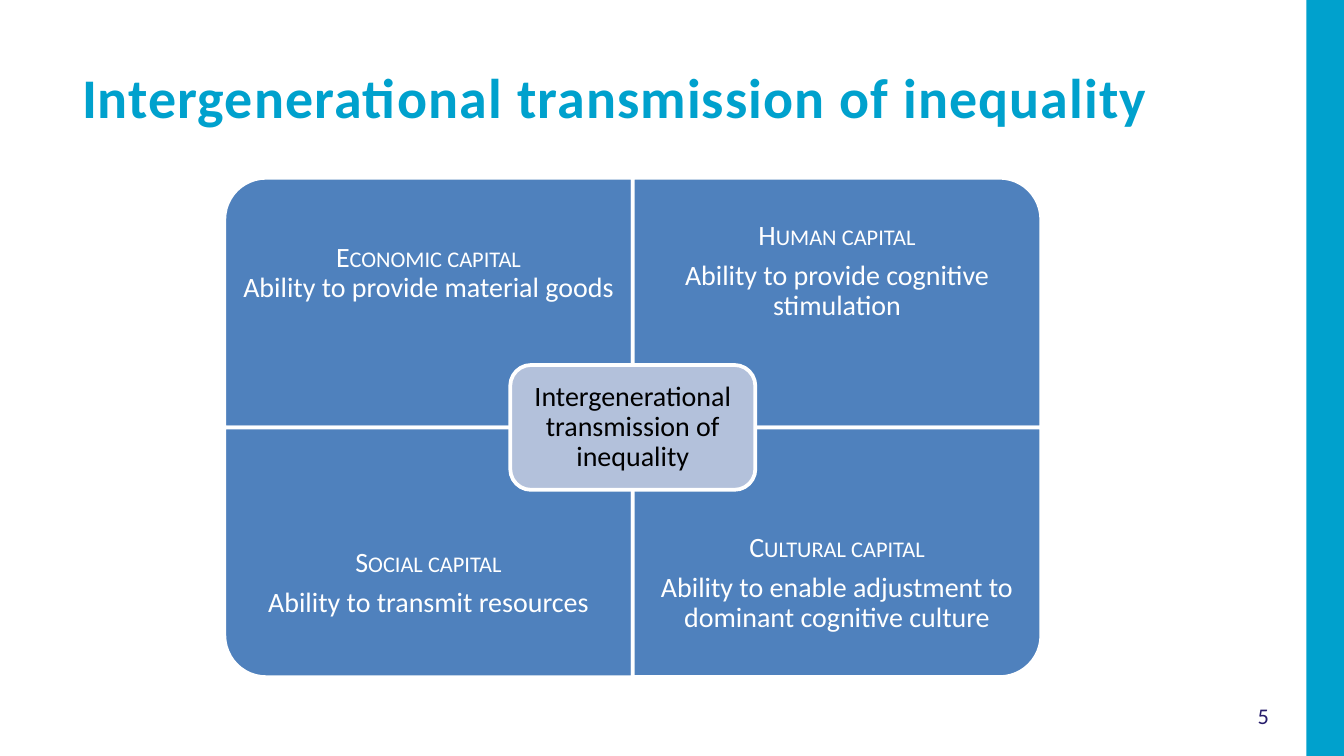
from pptx import Presentation
from pptx.dml.color import RGBColor
from pptx.enum.shapes import MSO_SHAPE as Shape
from pptx.enum.text import MSO_ANCHOR as Anchor, PP_ALIGN as Align
from pptx.util import Cm, Pt

TITLE = "Intergenerational transmission of inequality"
PAGE_NUMBER = "5"
PANELS = [
    {"column": 0, "row": 0, "turn": 270, "label": "Economic capital",
     "ability": "Ability to provide material goods", "label_spacing": 1.0, "label_after": 0},
    {"column": 1, "row": 0, "turn": 0, "label": "Human capital",
     "ability": "Ability to provide cognitive stimulation"},
    {"column": 0, "row": 1, "turn": 180, "label": "Social capital",
     "ability": "Ability to transmit resources"},
    {"column": 1, "row": 1, "turn": 90, "label": "Cultural capital",
     "ability": "Ability to enable adjustment to dominant cognitive culture"},
]
PAGE_W, PAGE_H = 25.4, 14.29
BAR_W = 0.71
GRID_LEFT, GRID_TOP = 4.24, 3.36
PANEL_W, PANEL_H = 7.72, 4.72
LABEL_H = PANEL_H * 3 / 4
CENTRE_W, CENTRE_H = PANEL_W * 0.6, PANEL_H / 2
AFTER = 5.25


def colour(code):
    return RGBColor.from_string(code)


def add_block(page, kind, left, top, width, height, fill, line=None):
    block = page.shapes.add_shape(kind, Cm(left), Cm(top), Cm(width), Cm(height))
    block.shadow.inherit = False
    block.fill.solid()
    block.fill.fore_color.rgb = colour(fill)
    if line:
        block.line.color.rgb = colour(line)
        block.line.width = Pt(2)
    else:
        block.line.fill.background()
    return block


def set_frame(frame, inset, anchor=Anchor.MIDDLE):
    frame.word_wrap = True
    frame.vertical_anchor = anchor
    frame.margin_left = frame.margin_right = Cm(inset)
    frame.margin_top = frame.margin_bottom = Cm(inset)


def add_span(para, text, size, code, bold=False):
    span = para.add_run()
    span.text = text
    span.font.name = "Calibri"
    span.font.size = Pt(size)
    span.font.bold = bold
    span.font.color.rgb = colour(code)
    return span


def set_para(para, spacing=0.9, after=AFTER):
    para.alignment = Align.CENTER
    para.line_spacing = spacing
    para.space_after = Pt(after)


def add_panel(page, panel):
    left = GRID_LEFT + panel["column"] * PANEL_W
    top = GRID_TOP + panel["row"] * PANEL_H
    sideways = panel["turn"] % 180 == 90
    width, height = (PANEL_H, PANEL_W) if sideways else (PANEL_W, PANEL_H)
    block = add_block(page, Shape.ROUND_1_RECTANGLE, left + (PANEL_W - width) / 2,
                      top + (PANEL_H - height) / 2, width, height, "4F81BD", "FFFFFF")
    block.rotation = panel["turn"]

    text_top = top + panel["row"] * (PANEL_H - LABEL_H)
    box = page.shapes.add_textbox(Cm(left), Cm(text_top), Cm(PANEL_W), Cm(LABEL_H))
    frame = box.text_frame
    set_frame(frame, 0.3)
    label = frame.paragraphs[0]
    set_para(label, panel.get("label_spacing", 0.9), panel.get("label_after", AFTER))
    span = add_span(label, panel["label"], 15, "FFFFFF")
    span.font._element.set("cap", "small")
    ability = frame.add_paragraph()
    set_para(ability)
    add_span(ability, panel["ability"], 15, "FFFFFF")


def add_centre(page):
    block = add_block(page, Shape.ROUNDED_RECTANGLE, GRID_LEFT + PANEL_W - CENTRE_W / 2,
                      GRID_TOP + PANEL_H - CENTRE_H / 2, CENTRE_W, CENTRE_H, "B3C1DB", "FFFFFF")
    set_frame(block.text_frame, 0.15)
    para = block.text_frame.paragraphs[0]
    set_para(para)
    add_span(para, TITLE, 15, "000000")


def add_title(page):
    title = page.shapes.title
    title.left, title.top, title.width, title.height = Cm(1.3), Cm(0.94), Cm(21.2), Cm(1.6)
    set_frame(title.text_frame, 0.25, Anchor.TOP)
    para = title.text_frame.paragraphs[0]
    para.alignment = Align.LEFT
    span = add_span(para, TITLE, 30, "00A1CD", bold=True)
    span.font._element.set("spc", "60")


def add_page_number(page):
    box = page.shapes.add_textbox(Cm(23.06), Cm(13.08), Cm(1.63), Cm(0.89))
    set_frame(box.text_frame, 0.13)
    para = box.text_frame.paragraphs[0]
    para.alignment = Align.CENTER
    add_span(para, PAGE_NUMBER, 12, "271D6C")


def main():
    deck = Presentation()
    deck.slide_width, deck.slide_height = Cm(PAGE_W), Cm(PAGE_H)
    page = deck.slides.add_slide(deck.slide_layouts[5])
    add_block(page, Shape.RECTANGLE, PAGE_W - BAR_W, 0, BAR_W, PAGE_H, "00A1CD")
    add_page_number(page)
    add_title(page)
    for panel in PANELS:
        add_panel(page, panel)
    add_centre(page)
    deck.save("out.pptx")


if __name__ == "__main__":
    main()
